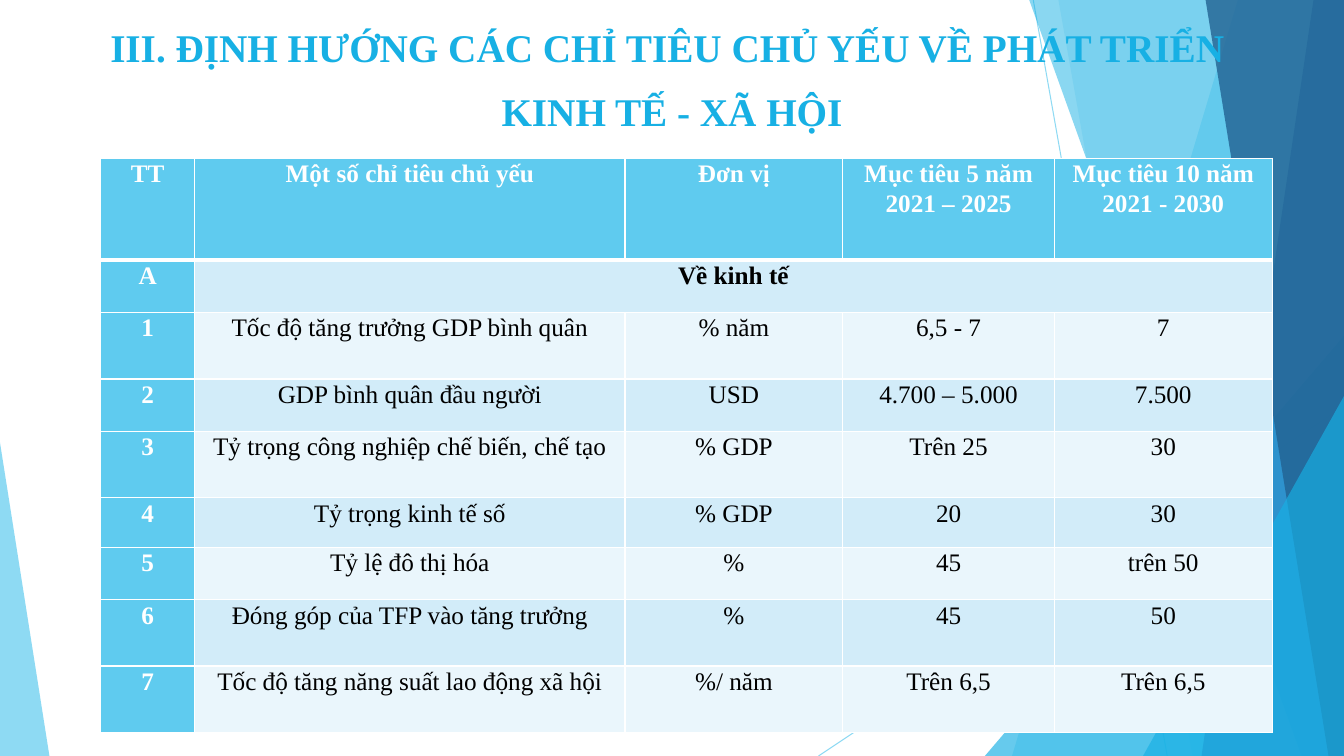
from lxml import etree
from pptx import Presentation
from pptx.dml.color import RGBColor
from pptx.enum.shapes import MSO_CONNECTOR, MSO_SHAPE
from pptx.enum.text import MSO_ANCHOR, PP_ALIGN
from pptx.oxml.ns import qn
from pptx.util import Inches, Pt

STRAIGHT = MSO_CONNECTOR.STRAIGHT
TRIANGLE = MSO_SHAPE.ISOSCELES_TRIANGLE
CENTER = PP_ALIGN.CENTER
BOTTOM = MSO_ANCHOR.BOTTOM

WIDTH, HEIGHT = Inches(13.33), Inches(7.5)
FONT = "Times New Roman"
SKY, BLUE, STEEL, NAVY = "5FCBEF", "17B0E4", "2E83C3", "226292"
WHITE, BLACK = "FFFFFF", "000000"
BANDS = ("EAF6FC", "D2ECF9")

TITLE = ["III. ĐỊNH HƯỚNG CÁC CHỈ TIÊU CHỦ YẾU VỀ PHÁT TRIỂN ",
         "KINH TẾ - XÃ HỘI"]

# Column widths and row heights in percent of the slide
COLS = [6.98, 32.03, 16.2, 15.75, 16.2]
ROWS = [13.47, 6.93, 8.8, 6.93, 8.8, 6.53, 6.93, 8.8, 8.8]
DATA = [
    ["TT", "Một số chỉ tiêu chủ yếu", "Đơn vị",
     "Mục tiêu 5 năm 2021 – 2025", "Mục tiêu 10 năm 2021 - 2030"],
    ["A", "Về kinh tế"],
    ["1", "Tốc độ tăng trưởng GDP bình quân", "% năm", "6,5 - 7", "7"],
    ["2", "GDP bình quân đầu người", "USD", "4.700 – 5.000", "7.500"],
    ["3", "Tỷ trọng công nghiệp chế biến, chế tạo", "% GDP", "Trên 25", "30"],
    ["4", "Tỷ trọng kinh tế số", "% GDP", "20", "30"],
    ["5", "Tỷ lệ đô thị hóa", "%", "45", "trên 50"],
    ["6", "Đóng góp của TFP vào tăng trưởng", "%", "45", "50"],
    ["7", "Tốc độ tăng năng suất lao động xã hội", "%/ năm", "Trên 6,5", "Trên 6,5"],
]


def x(percent):
    return round(WIDTH * percent / 100)


def y(percent):
    return round(HEIGHT * percent / 100)


def rgb(color):
    return RGBColor.from_string(color)


def set_alpha(fill_parent, alpha):
    """Give the first solid colour below an element an opacity in percent."""
    clr = fill_parent.find(".//" + qn("a:srgbClr"))
    etree.SubElement(clr, qn("a:alpha")).set("val", str(alpha * 1000))


def paint(sp, color, alpha):
    sp.shadow.inherit = False
    sp.fill.solid()
    sp.fill.fore_color.rgb = rgb(color)
    set_alpha(sp._element.spPr, alpha)
    sp.line.fill.background()


def add_ray(s, x1, y1, x2, y2):
    line = s.shapes.add_connector(STRAIGHT, x(x1), y(y1), x(x2), y(y2))
    line.line.width = Pt(0.75)
    line.line.color.rgb = rgb(SKY)
    spPr = line._element.spPr
    set_alpha(spPr, 70)
    etree.SubElement(spPr, qn("a:effectLst"))


def add_panel(s, top, bottom, color, alpha):
    """Full-height panel from a slanted left edge to the slide's right edge."""
    fb = s.shapes.build_freeform(x(top), 0, scale=1.0)
    fb.add_line_segments([(WIDTH, 0), (WIDTH, HEIGHT), (x(bottom), HEIGHT)])
    paint(fb.convert_to_shape(), color, alpha)


def add_corner(s, left, top, width, apex, color, alpha):
    """Right triangle that stands on the slide's bottom edge."""
    sp = s.shapes.add_shape(TRIANGLE, x(left), y(top), x(width), y(100 - top))
    sp.adjustments[0] = apex
    paint(sp, color, alpha)


def write(p, text, size=18, color=BLACK, bold=False, spacing=None, gap=None):
    p.alignment = CENTER
    if spacing:
        p.line_spacing = spacing
    if gap:
        p.space_before = p.space_after = Pt(gap)
    r = p.add_run()
    r.text = text
    r.font.name = FONT
    r.font.size = Pt(size)
    r.font.bold = bold
    r.font.color.rgb = rgb(color)


def add_title(s):
    tf = s.shapes.add_textbox(x(3.08), y(6.67), x(93.83), y(11.73)).text_frame
    tf.word_wrap = True
    tf.vertical_anchor = BOTTOM
    for i, text in enumerate(TITLE):
        p = tf.add_paragraph() if i else tf.paragraphs[0]
        write(p, text, size=28, color=BLUE, bold=True, gap=6)


def set_borders(cell, **widths):
    tcPr = cell._tc.get_or_add_tcPr()
    for i, side in enumerate("LRTB"):
        ln = etree.Element(qn("a:ln" + side), w=str(Pt(widths.get(side, 1))))
        fill = etree.SubElement(ln, qn("a:solidFill"))
        etree.SubElement(fill, qn("a:srgbClr"), val=WHITE)
        tcPr.insert(i, ln)


def format_cell(cell, row, col):
    cell.margin_left = cell.margin_right = Inches(0.07)
    cell.margin_top = cell.margin_bottom = 0
    heading = row == 0 or col == 0
    cell.fill.solid()
    cell.fill.fore_color.rgb = rgb(SKY if heading else BANDS[row % 2])
    set_borders(cell, T=3 if row == 1 else 1, B=3 if row == 0 else 1)
    if col < len(DATA[row]):
        write(cell.text_frame.paragraphs[0], DATA[row][col], spacing=1.07,
              color=WHITE if heading else BLACK, bold=heading or row == 1)


def add_targets_table(s):
    table = s.shapes.add_table(len(ROWS), len(COLS), x(7.5), y(20.93),
                               x(sum(COLS)), y(sum(ROWS))).table
    for column, width in zip(table.columns, COLS):
        column.width = x(width)
    for row, height in zip(table.rows, ROWS):
        row.height = y(height)
    table.cell(1, 1).merge(table.cell(1, len(COLS) - 1))
    for row in range(len(ROWS)):
        for col in range(len(COLS)):
            format_cell(table.cell(row, col), row, col)


def add_backdrop(s):
    add_ray(s, 76.88, 0, 86.85, 100)
    add_ray(s, 100, 53.73, 60.9, 100)
    add_panel(s, 92.1, 75.3, SKY, 36)
    add_panel(s, 78.75, 88.73, SKY, 20)
    add_corner(s, 73.28, 44.4, 26.72, 1, BLUE, 66)
    add_panel(s, 76.58, 96.83, BLUE, 50)
    add_panel(s, 97.73, 89.4, STEEL, 70)
    add_panel(s, 89.7, 98.85, NAVY, 80)
    add_corner(s, 85.05, 52.4, 14.95, 1, BLUE, 66)
    add_corner(s, 0, 58.53, 3.68, 0, SKY, 70)


def main():
    prs = Presentation()
    prs.slide_width, prs.slide_height = WIDTH, HEIGHT
    s = prs.slides.add_slide(prs.slide_layouts[6])
    add_backdrop(s)
    add_title(s)
    add_targets_table(s)
    prs.save("out.pptx")


if __name__ == "__main__":
    main()
